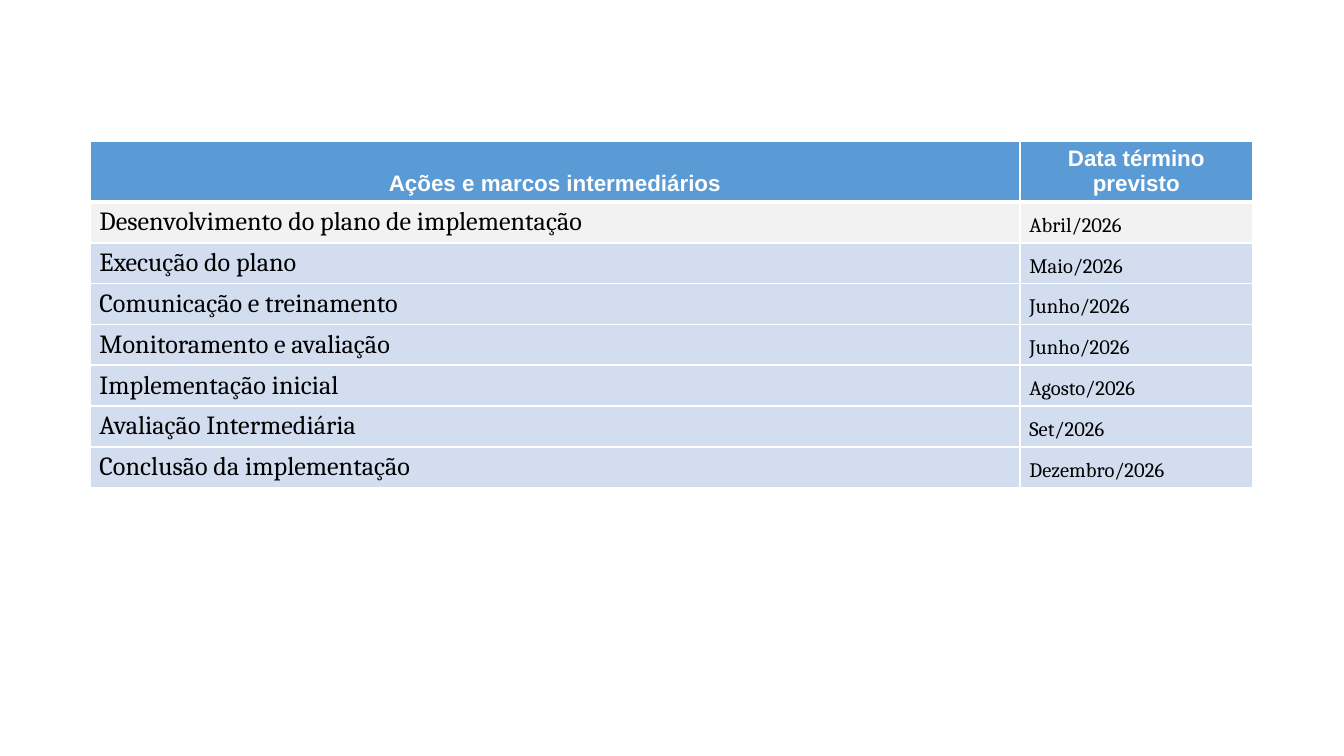
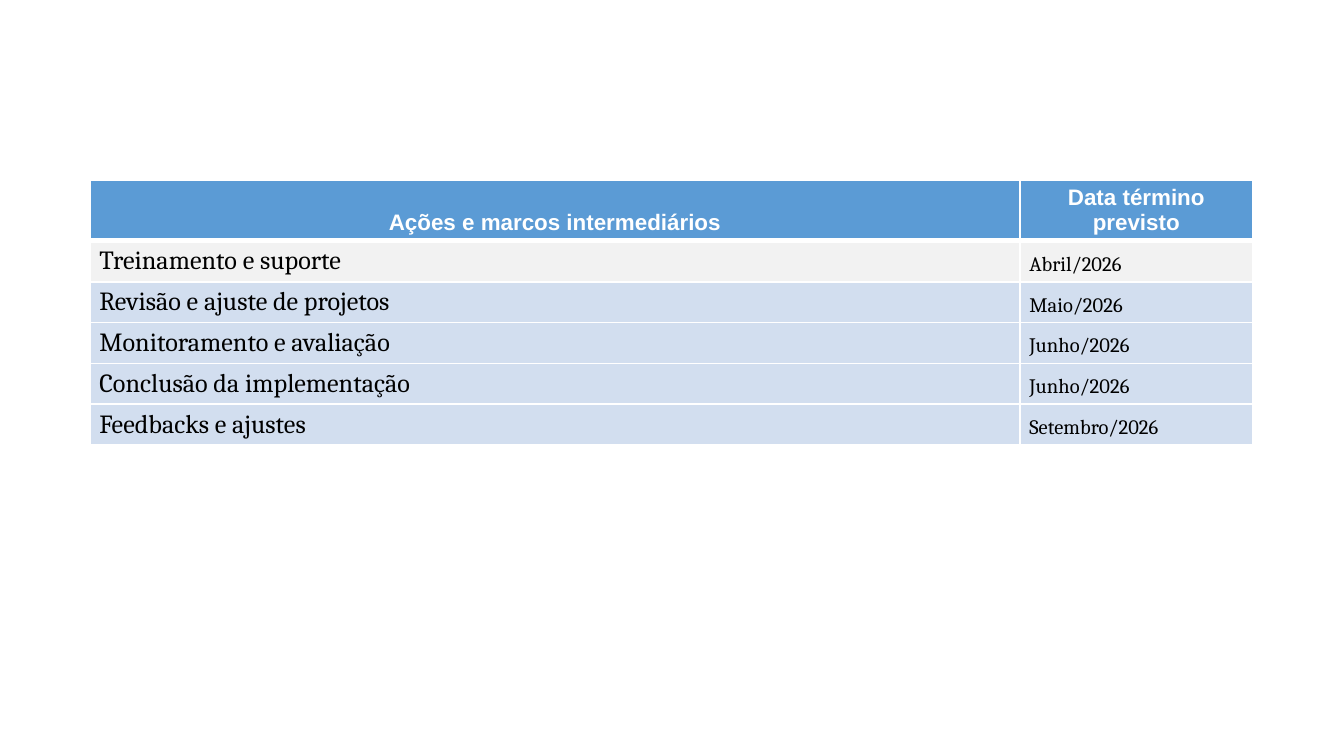
from dataclasses import dataclass

from lxml.etree import SubElement
from pptx import Presentation
from pptx.dml.color import RGBColor
from pptx.enum.text import MSO_ANCHOR as Anchor, PP_ALIGN as Align
from pptx.oxml.ns import qn
from pptx.util import Inches, Pt


@dataclass(frozen=True)
class TextStyle:
    """Font and alignment of one kind of cell."""
    font: str
    size: int
    color: str
    bold: bool = False
    align: Align = Align.LEFT


@dataclass(frozen=True)
class Theme:
    """Colours, type and measures shared by the slides."""
    header_fill: str = "5B9BD5"
    first_row_fill: str = "F2F2F2"
    row_fill: str = "D2DEEF"
    border: str = "FFFFFF"
    border_width: int = 1
    header_rule: int = 3
    header_text: TextStyle = TextStyle("Arial", 12, "FFFFFF", True, Align.CENTER)
    action_text: TextStyle = TextStyle("Cambria", 14, "000000")
    date_text: TextStyle = TextStyle("Cambria", 11, "000000")
    inset_x: float = 0.07
    inset_y: float = 0.04
    left: float = 6.7
    width: float = 86.5
    row_height: float = 4.62
    column_shares: tuple = (0.8, 0.2)


THEME = Theme()
HEADINGS = ("Ações e marcos intermediários", "Data término previsto")
SCHEDULES = [
    {"top": 18.67, "height": 43.2, "milestones": [
        ("Desenvolvimento do plano de implementação", "Abril/2026"),
        ("Execução do plano", "Maio/2026"),
        ("Comunicação e treinamento", "Junho/2026"),
        ("Monitoramento e avaliação", "Junho/2026"),
        ("Implementação inicial", "Agosto/2026"),
        ("Avaliação Intermediária", "Set/2026"),
        ("Conclusão da implementação", "Dezembro/2026"),
    ]},
    {"top": 23.82, "height": 32.36, "milestones": [
        ("Treinamento e suporte", "Abril/2026"),
        ("Revisão e ajuste de projetos", "Maio/2026"),
        ("Monitoramento e avaliação", "Junho/2026"),
        ("Conclusão da implementação", "Junho/2026"),
        ("Feedbacks e ajustes", "Setembro/2026"),
    ]},
]


def percent(share, length):
    """Return a percentage of a length."""
    return round(length * share / 100)


def set_borders(cell, widths):
    """Draw the given cell sides, a mapping of side to width in points."""
    properties = cell._tc.get_or_add_tcPr()
    for side, width in widths.items():
        line = SubElement(properties, qn(f"a:ln{side}"), w=str(Pt(width)))
        fill = SubElement(line, qn("a:solidFill"))
        SubElement(fill, qn("a:srgbClr"), val=THEME.border)


def fill_cell(cell, text, style, fill, borders):
    """Write one cell with its borders, fill and type."""
    set_borders(cell, borders)
    cell.fill.solid()
    cell.fill.fore_color.rgb = RGBColor.from_string(fill)
    cell.vertical_anchor = Anchor.BOTTOM
    cell.margin_left = cell.margin_right = Inches(THEME.inset_x)
    cell.margin_top = cell.margin_bottom = Inches(THEME.inset_y)
    cell.text = text
    paragraph = cell.text_frame.paragraphs[0]
    paragraph.alignment = style.align
    paragraph.font.name = style.font
    paragraph.font.size = Pt(style.size)
    paragraph.font.bold = style.bold
    paragraph.font.color.rgb = RGBColor.from_string(style.color)


def add_schedule(slide, box, row_height, milestones):
    """Place the milestone table in a box of left, top, width and height."""
    left, top, width, height = box
    rows = [HEADINGS, *milestones]
    frame = slide.shapes.add_table(len(rows), len(HEADINGS), left, top, width, height)
    table = frame.table
    table.horz_banding = False
    for column, share in zip(table.columns, THEME.column_shares):
        column.width = round(width * share)

    thin = THEME.border_width
    row_borders = {"L": thin, "R": thin, "B": thin}
    header_borders = {"L": thin, "R": thin, "T": thin, "B": THEME.header_rule}
    row_styles = (THEME.action_text, THEME.date_text)
    for index, texts in enumerate(rows):
        table.rows[index].height = row_height
        if index == 0:
            fill, borders = THEME.header_fill, header_borders
            styles = (THEME.header_text,) * len(HEADINGS)
        else:
            fill = THEME.first_row_fill if index == 1 else THEME.row_fill
            borders, styles = row_borders, row_styles
        for column, (text, style) in enumerate(zip(texts, styles)):
            fill_cell(table.cell(index, column), text, style, fill, borders)
    frame.height = height


def add_schedule_slide(presentation, top, height, milestones):
    """Add a blank slide that holds one milestone table."""
    slide = presentation.slides.add_slide(presentation.slide_layouts[6])
    slide_width, slide_height = presentation.slide_width, presentation.slide_height
    box = (percent(THEME.left, slide_width), percent(top, slide_height),
           percent(THEME.width, slide_width), percent(height, slide_height))
    add_schedule(slide, box, percent(THEME.row_height, slide_height), milestones)


def main():
    """Build the presentation and save it."""
    presentation = Presentation()
    presentation.slide_width = Inches(10)
    presentation.slide_height = Inches(10 * 9 / 16)
    for schedule in SCHEDULES:
        add_schedule_slide(presentation, **schedule)
    presentation.save("out.pptx")


if __name__ == "__main__":
    main()
